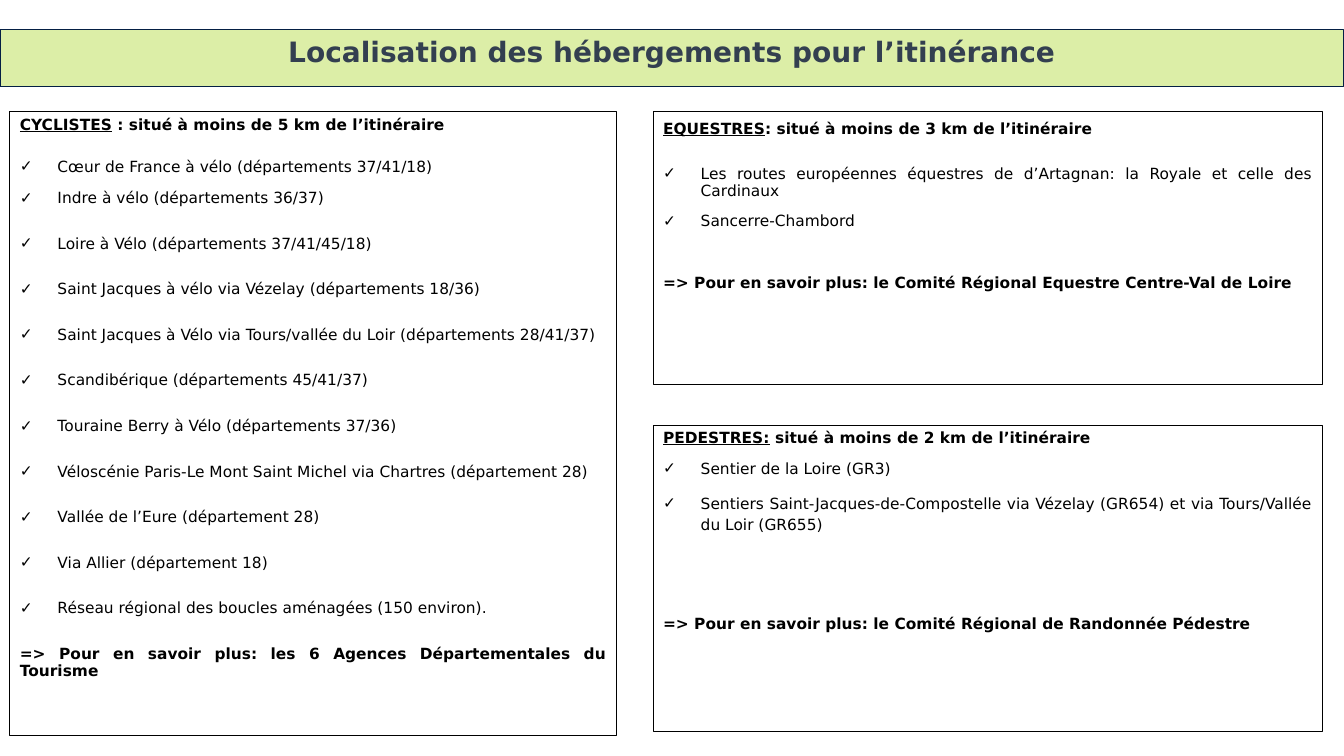
from lxml.etree import SubElement
from pptx import Presentation
from pptx.dml.color import RGBColor
from pptx.enum.shapes import MSO_SHAPE
from pptx.enum.text import MSO_ANCHOR, MSO_AUTO_SIZE, PP_ALIGN
from pptx.oxml.ns import qn
from pptx.util import Cm, Pt

COLORS = {"text": "000000", "title": "333F50", "band": "DCEEA7", "band_line": "041F44"}
FONT = "DejaVu Sans"

CYCLE_ROUTES = [
    "Indre à vélo (départements 36/37)",
    "Loire à Vélo (départements 37/41/45/18)",
    "Saint Jacques à vélo via Vézelay (départements 18/36)",
    "Saint Jacques à Vélo via Tours/vallée du Loir (départements 28/41/37)",
    "Scandibérique (départements 45/41/37)",
    "Touraine Berry à Vélo (départements 37/36)",
    "Véloscénie Paris-Le Mont Saint Michel via Chartres (département 28)",
    "Vallée de l’Eure (département 28)",
    "Via Allier (département 18)",
    "Réseau régional des boucles aménagées (150 environ).",
]


def set_attributes(target, values):
    for name, value in values.items():
        setattr(target, name, value)


def spacing(line, before=10, after=0):
    return {"line_spacing": line, "space_before": Pt(before), "space_after": Pt(after)}


class SlideBuilder:
    def __init__(self, presentation):
        self.slide = presentation.slides.add_slide(presentation.slide_layouts[5])

    def outline(self, shape, color):
        shape.line.color.rgb = RGBColor.from_string(COLORS[color])
        shape.line.width = Pt(0.75)

    def add_run(self, paragraph, text, size=11, color="text", **format_values):
        run = paragraph.add_run()
        run.text = text
        set_attributes(run.font, {"name": FONT, "size": Pt(size), **format_values})
        run.font.color.rgb = RGBColor.from_string(COLORS[color])

    def title(self, text, left, top, width, height):
        shape = self.slide.shapes.title
        set_attributes(shape, {"left": Cm(left), "top": Cm(top),
                               "width": Cm(width), "height": Cm(height)})
        shape.fill.solid()
        shape.fill.fore_color.rgb = RGBColor.from_string(COLORS["band"])
        self.outline(shape, "band_line")
        set_attributes(shape.text_frame, {"vertical_anchor": MSO_ANCHOR.TOP,
                                          "auto_size": MSO_AUTO_SIZE.NONE,
                                          "word_wrap": True})
        paragraph = shape.text_frame.paragraphs[0]
        paragraph.alignment = PP_ALIGN.CENTER
        self.add_run(paragraph, text, size=20, color="title", bold=True)

    def panel(self, left, top, width, height):
        shape = self.slide.shapes.add_shape(
            MSO_SHAPE.RECTANGLE, Cm(left), Cm(top), Cm(width), Cm(height))
        shape.shadow.inherit = False
        shape.fill.background()
        self.outline(shape, "text")
        set_attributes(shape.text_frame, {"vertical_anchor": MSO_ANCHOR.TOP,
                                          "word_wrap": True})
        return shape.text_frame

    def heading(self, frame, audience, rule, layout):
        paragraph = frame.paragraphs[0]
        set_attributes(paragraph, {"alignment": PP_ALIGN.JUSTIFY, **layout, "space_before": Pt(0)})
        self.add_run(paragraph, audience, bold=True, underline=True)
        self.add_run(paragraph, rule, bold=True, underline=False)

    def paragraph(self, frame, text, layout, bold=False):
        paragraph = frame.add_paragraph()
        set_attributes(paragraph, {"alignment": PP_ALIGN.JUSTIFY, **layout})
        self.add_run(paragraph, text, bold=bold)
        return paragraph

    def check_item(self, frame, text, layout):
        paragraph = self.paragraph(frame, text, layout)
        properties = paragraph._p.get_or_add_pPr()
        properties.set("marL", str(Cm(0.95)))
        properties.set("indent", str(-Cm(0.95)))
        SubElement(properties, qn("a:buFont")).set("typeface", FONT)
        SubElement(properties, qn("a:buChar")).set("char", "✓")


def main():
    presentation = Presentation()
    set_attributes(presentation, {"slide_width": Cm(33.87), "slide_height": Cm(19.05)})
    builder = SlideBuilder(presentation)
    builder.title("Localisation des hébergements pour l’itinérance", 0, 0.74, 33.87, 1.45)

    normal, tight, loose = spacing(0.95, after=10), spacing(0.9), spacing(1.15, after=10)

    cyclists = builder.panel(0.25, 2.82, 15.29, 15.72)
    builder.heading(cyclists, "CYCLISTES", " : situé à moins de 5 km de l’itinéraire", normal)
    builder.check_item(cyclists, "Cœur de France à vélo (départements 37/41/18)", spacing(0.7))
    for route in CYCLE_ROUTES:
        builder.check_item(cyclists, route, normal)
    builder.paragraph(
        cyclists, "=> Pour en savoir plus: les 6 Agences Départementales du Tourisme",
        normal, bold=True)

    riders = builder.panel(16.46, 2.82, 16.87, 6.88)
    builder.heading(riders, "EQUESTRES", ": situé à moins de 3 km de l’itinéraire", loose)
    for route in (
        "Les routes européennes équestres de d’Artagnan: la Royale et celle des Cardinaux",
        "Sancerre-Chambord",
    ):
        builder.check_item(riders, route, tight)
    builder.paragraph(
        riders, "=> Pour en savoir plus: le Comité Régional Equestre Centre-Val de Loire",
        spacing(0.9, before=32), bold=True)

    walkers = builder.panel(16.46, 10.72, 16.87, 7.72)
    builder.heading(walkers, "PEDESTRES:", " situé à moins de 2 km de l’itinéraire", tight)
    builder.check_item(walkers, "Sentier de la Loire (GR3)", tight)
    builder.check_item(
        walkers,
        "Sentiers Saint-Jacques-de-Compostelle via Vézelay (GR654) "
        "et via Tours/Vallée du Loir (GR655)",
        loose)
    builder.paragraph(
        walkers, "=> Pour en savoir plus: le Comité Régional de Randonnée Pédestre",
        spacing(1.15, before=45, after=10), bold=True)

    presentation.save("out.pptx")


if __name__ == "__main__":
    main()
